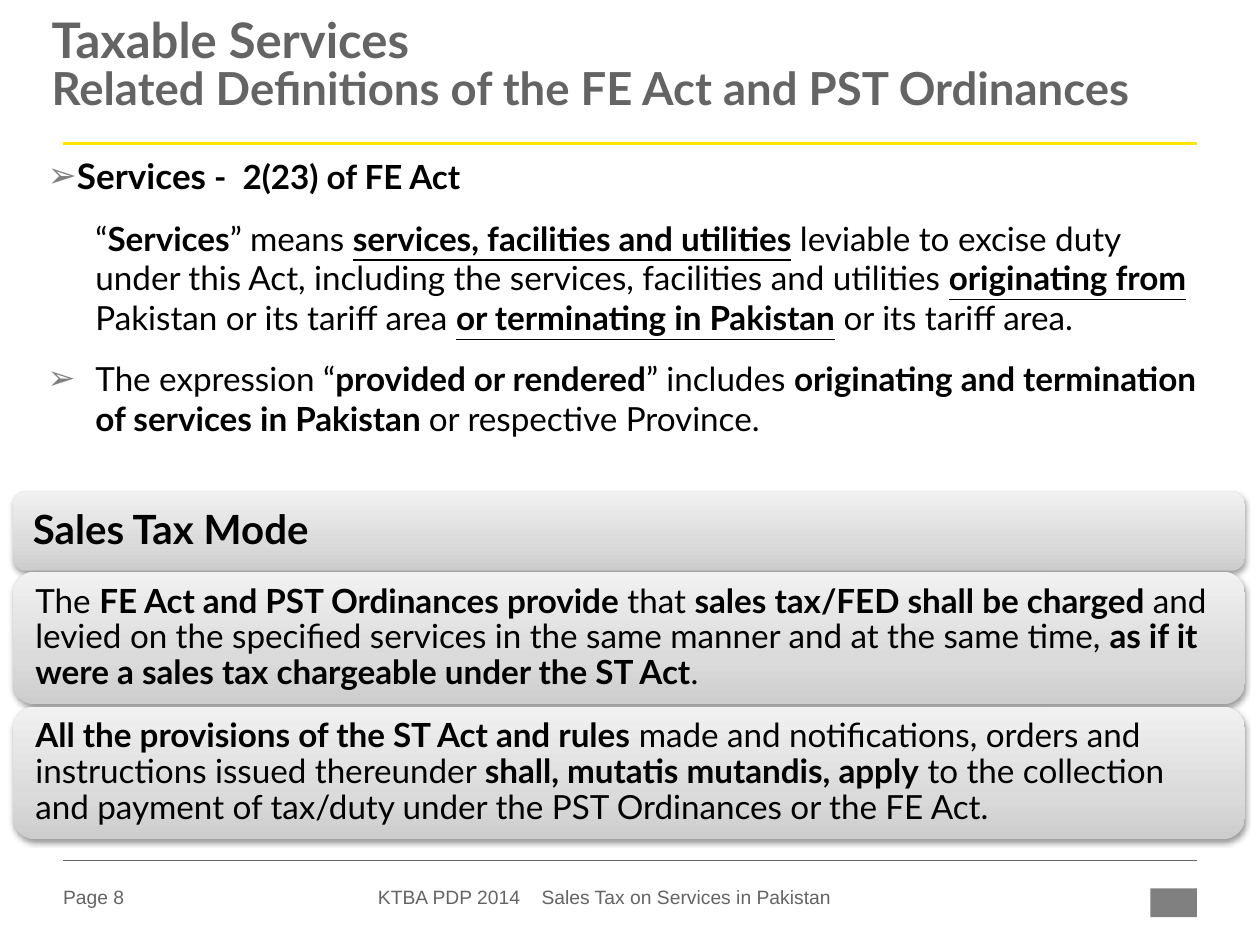
from lxml import etree
from pptx import Presentation
from pptx import util as u
from pptx.dml.color import RGBColor
from pptx.enum import shapes, text
from pptx.oxml import parse_xml
from pptx.oxml.ns import nsdecls, qn

PX = 9144
GREY, BLACK, MID, YELLOW = "646464", "000000", "808080", "FFE600"

TITLE = [("Taxable Services", 28),
         ("Related Definitions of the FE Act and PST Ordinances", 26)]

# Each run is (text, style): b bold, u underlined.
BODY = [
    {"left": 0, "indent": -38, "bullet": "➢",
     "runs": [("Services", "b", 20), (" -  2(23) of FE Act", "b")]},
    {"left": 38, "indent": 0, "bullet": None,
     "runs": [("“", ""), ("Services", "b"), ("” means ", ""),
              ("services, facilities and utilities", "bu"),
              (" leviable to excise duty under this Act, including the services, "
               "facilities and utilities ", ""),
              ("originating from", "bu"), (" Pakistan or its tariff area ", ""),
              ("or terminating in Pakistan", "bu"), (" or its tariff area.", "")]},
    {"left": 38, "indent": -38, "bullet": "➢",
     "runs": [("The expression “", ""), ("provided or rendered", "b"),
              ("” includes ", ""),
              ("originating and termination of services in Pakistan ", "b"),
              ("or respective Province.", "")]},
]

CARDS = [
    (390, 63, 23, [("Sales Tax Mode", "b")]),
    (454, 105, 19, [
        ("The ", ""), ("FE Act and PST Ordinances provide", "b"), (" that ", ""),
        ("sales tax/FED shall be charged", "b"),
        (" and levied on the specified services in the same manner and at the "
         "same time, ", ""),
        ("as if it were a sales tax chargeable under the ST Act", "b"), (".", "")]),
    (561, 105, 19, [
        ("All the provisions of the ST Act and rules", "b"),
        (" made and notifications, orders and instructions issued thereunder ", ""),
        ("shall, mutatis mutandis, apply", "b"),
        (" to the collection and payment of tax/duty under the PST Ordinances "
         "or the FE Act.", "")]),
]

RULES = [(114, YELLOW, 1.5), (683, GREY, 0.25)]
FOOTERS = [(50, 79, "Page 8"),
           (300, 376, "KTBA PDP 2014    Sales Tax on Services in Pakistan")]
GRADIENT = [(0, "CDCDCD"), (35, "DBDBDB"), (100, "F1F1F1")]


def px(*lengths):
    return [u.Emu(n * PX) for n in lengths]


def rgb(value):
    return RGBColor.from_string(value)


def set_frame(tf, insets, anchor):
    tf.word_wrap = True
    tf.vertical_anchor = anchor
    tf.margin_left, tf.margin_top, tf.margin_right, tf.margin_bottom = px(*insets)


def add_box(s, at, insets=(0, 0, 0, 0), anchor=text.MSO_ANCHOR.TOP):
    tf = s.shapes.add_textbox(*px(*at)).text_frame
    set_frame(tf, insets, anchor)
    return tf


def add_run(p, words, size, color=BLACK, style="", font="Lato"):
    r = p.add_run()
    r.text = words
    r.font.name, r.font.size = font, u.Pt(size)
    r.font.bold, r.font.underline = "b" in style, "u" in style
    r.font.color.rgb = rgb(color)


def add_runs(p, runs, size):
    for words, style, *own_size in runs:
        add_run(p, words, own_size[0] if own_size else size, style=style)


def set_bullet(p, left, indent, bullet):
    ppr = p._p.get_or_add_pPr()
    ppr.set("marL", str(left * PX))
    ppr.set("indent", str(indent * PX))
    if not bullet:
        etree.SubElement(ppr, qn("a:buNone"))
        return
    color = etree.SubElement(ppr, qn("a:buClr"))
    etree.SubElement(color, qn("a:srgbClr"), val=MID)
    etree.SubElement(ppr, qn("a:buFont"), typeface="Arial")
    etree.SubElement(ppr, qn("a:buChar"), char=bullet)


def style_card(sp):
    sp.line.fill.background()
    stops = "".join(f'<a:gs pos="{pos * 1000}"><a:srgbClr val="{color}"/></a:gs>'
                    for pos, color in GRADIENT)
    fill = parse_xml(f'<a:gradFill {nsdecls("a")} rotWithShape="1"><a:gsLst>{stops}'
                     '</a:gsLst><a:lin ang="16200000" scaled="0"/></a:gradFill>')
    shadow = parse_xml(
        f'<a:effectLst {nsdecls("a")}><a:outerShdw blurRad="{u.Pt(3.1)}" '
        f'dist="{u.Pt(1.6)}" dir="5400000" rotWithShape="0"><a:srgbClr val="{BLACK}">'
        '<a:alpha val="38000"/></a:srgbClr></a:outerShdw></a:effectLst>')
    sppr = sp._element.spPr
    sppr.find(qn("a:ln")).addprevious(fill)
    sppr.append(shadow)


def add_card(s, top, height, size, runs):
    sp = s.shapes.add_shape(shapes.MSO_SHAPE.ROUNDED_RECTANGLE,
                            *px(10, top, 978, height))
    style_card(sp)
    set_frame(sp.text_frame, (13, 13, 13, 13), text.MSO_ANCHOR.MIDDLE)
    p = sp.text_frame.paragraphs[0]
    p.alignment = text.PP_ALIGN.LEFT
    p.line_spacing = 0.9
    add_runs(p, runs, size)


def add_rule(s, y, color, width):
    line = s.shapes.add_connector(shapes.MSO_CONNECTOR.STRAIGHT, *px(50, y, 950, y))
    line.line.color.rgb, line.line.width = rgb(color), u.Pt(width)
    etree.SubElement(line._element.spPr, qn("a:effectLst"))


def main():
    prs = Presentation()
    prs.slide_width, prs.slide_height = px(1000, 750)
    s = prs.slides.add_slide(prs.slide_layouts[6])

    for rule in RULES:
        add_rule(s, *rule)
    for left, width, words in FOOTERS:
        tf = add_box(s, (left, 701, width, 22), anchor=text.MSO_ANCHOR.MIDDLE)
        add_run(tf.paragraphs[0], words, 11, GREY, font="Arial")

    mark = s.shapes.add_shape(shapes.MSO_SHAPE.RECTANGLE, *px(913, 705, 37, 23))
    mark.shadow.inherit = False
    mark.fill.solid()
    mark.fill.fore_color.rgb = rgb(MID)
    mark.line.fill.background()

    p = add_box(s, (41, 15, 921, 94)).paragraphs[0]
    p.line_spacing = 0.85
    for i, (words, size) in enumerate(TITLE):
        if i:
            p.add_line_break()
        add_run(p, words, size, GREY, "b")

    tf = add_box(s, (28, 118, 943, 256), (10, 5, 10, 5))
    for i, item in enumerate(BODY):
        p = tf.add_paragraph() if i else tf.paragraphs[0]
        p.space_before = u.Pt(12)
        set_bullet(p, item["left"], item["indent"], item["bullet"])
        add_runs(p, item["runs"], 19)

    for card in CARDS:
        add_card(s, *card)

    prs.save("out.pptx")


if __name__ == "__main__":
    main()
